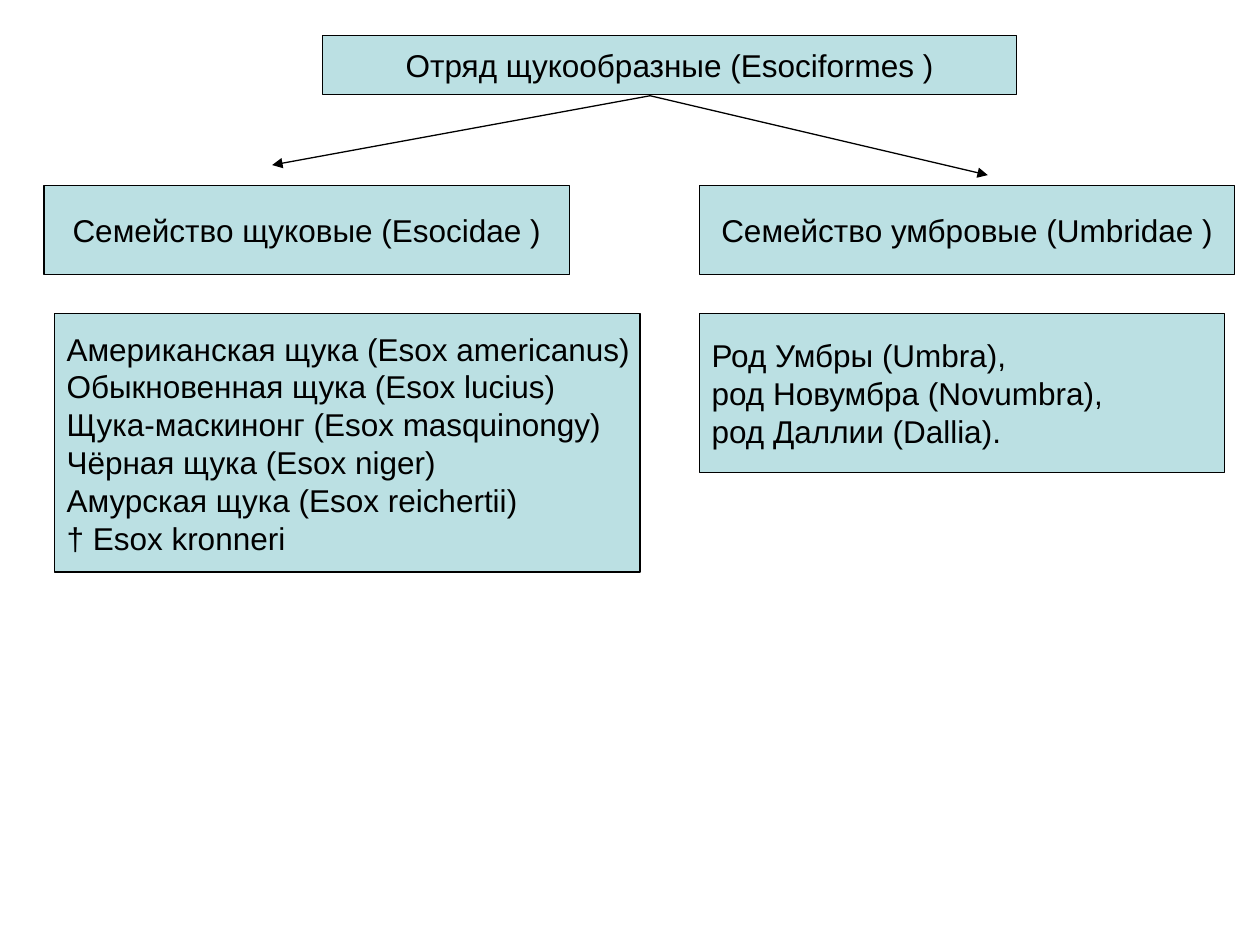
from pptx import Presentation
from pptx.dml.color import RGBColor
from pptx.enum.shapes import MSO_CONNECTOR as Link, MSO_SHAPE as Shape
from pptx.enum.text import MSO_ANCHOR as Anchor, PP_ALIGN as Align
from pptx.oxml.ns import qn
from pptx.util import Inches, Pt
from lxml.etree import SubElement

AQUA = RGBColor(0xBB, 0xE0, 0xE3)
BLACK = RGBColor(0, 0, 0)


class Chart:
    """Draws the boxes and arrows of a family tree on one slide."""

    font = "Arial"
    size = Pt(18)
    width = Pt(0.75)

    def __init__(self, slide):
        self.shapes = slide.shapes

    def outline(self, line):
        line.color.rgb = BLACK
        line.width = self.width

    def box(self, left, top, width, height, rows, align=Align.LEFT):
        box = self.shapes.add_shape(
            Shape.RECTANGLE, *map(Inches, (left, top, width, height)))
        box.shadow.inherit = False
        box.fill.solid()
        box.fill.fore_color.rgb = AQUA
        self.outline(box.line)
        frame = box.text_frame
        frame.word_wrap = False
        frame.vertical_anchor = Anchor.MIDDLE
        frame.text = "\n".join(rows)
        for para in frame.paragraphs:
            para.alignment = align
            para.font.name = self.font
            para.font.size = self.size
            para.font.color.rgb = BLACK

    def title(self, left, top, width, height, text):
        self.box(left, top, width, height, [text], Align.CENTER)

    def arrow(self, start, end):
        arrow = self.shapes.add_connector(
            Link.STRAIGHT, *map(Inches, (*start, *end)))
        self.outline(arrow.line)
        SubElement(arrow.line._get_or_add_ln(), qn("a:tailEnd"), type="triangle")
        SubElement(arrow._element.spPr, qn("a:effectLst"))


def main():
    deck = Presentation()
    deck.slide_width, deck.slide_height = Inches(10), Inches(7.5)
    chart = Chart(deck.slides.add_slide(deck.slide_layouts[6]))

    chart.title(2.56, 0.28, 5.51, 0.47, "Отряд щукообразные (Esociformes )")
    for end in ((2.16, 1.31), (7.84, 1.39)):
        chart.arrow((5.16, 0.76), end)

    chart.title(0.35, 1.47, 4.17, 0.71, "Семейство щуковые (Esocidae )")
    chart.title(5.55, 1.47, 4.25, 0.71, "Семейство умбровые (Umbridae )")

    chart.box(0.43, 2.49, 4.65, 2.05, [
        "Американская щука (Esox americanus)",
        "Обыкновенная щука (Esox lucius)",
        "Щука-маскинонг (Esox masquinongy)",
        "Чёрная щука (Esox niger)",
        "Амурская щука (Esox reichertii)",
        "† Esox kronneri",
    ])
    chart.box(5.55, 2.49, 4.17, 1.26, [
        "Род Умбры (Umbra),",
        "род Новумбра (Novumbra),",
        "род Даллии (Dallia).",
    ])
    deck.save("out.pptx")


if __name__ == "__main__":
    main()
